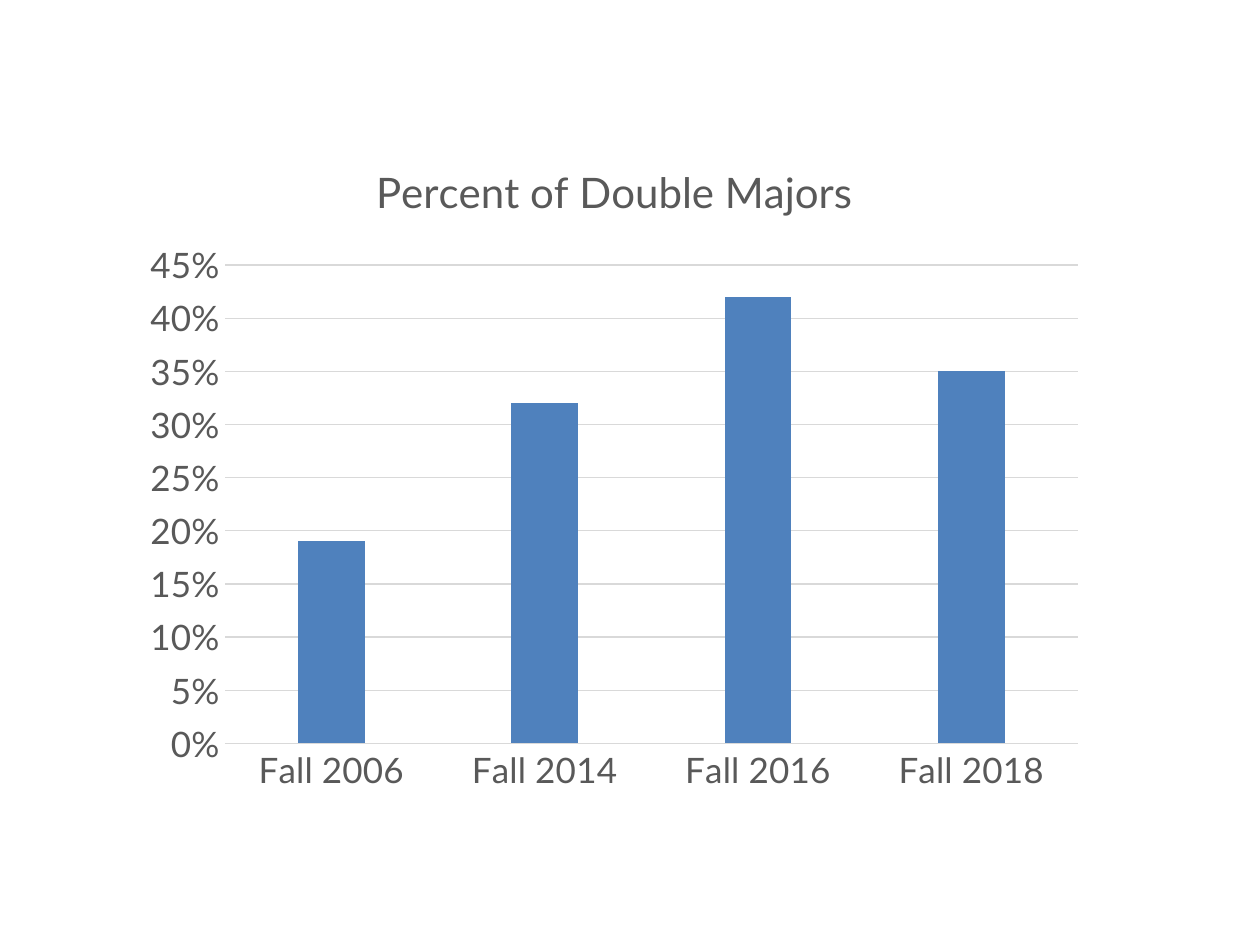
from dataclasses import dataclass

from pptx import Presentation
from pptx import util as u
from pptx.chart import data as chart_data
from pptx.dml import color
from pptx.enum import chart as chart_enum


@dataclass(frozen=True)
class Theme:
    font: str = "Lato"
    paper: str = "FFFFFF"
    ink: str = "595959"
    rule: str = "D9D9D9"
    bar: str = "4F81BD"
    title_size: int = 24
    label_size: int = 20
    rule_width: float = 0.75


THEME = Theme()
BLANK_LAYOUT = 6
TITLE = "Percent of Double Majors"
SHARES = {"Fall 2006": 0.19, "Fall 2014": 0.32, "Fall 2016": 0.42, "Fall 2018": 0.35}


def rgb(value):
    return color.RGBColor.from_string(value)


def style_font(font, size):
    font.name = THEME.font
    font.size = u.Pt(size)
    font.bold = False
    font.color.rgb = rgb(THEME.ink)


def style_rule(line):
    line.color.rgb = rgb(THEME.rule)
    line.width = u.Pt(THEME.rule_width)


def style_axes(chart):
    for axis in (chart.category_axis, chart.value_axis):
        axis.major_tick_mark = chart_enum.XL_TICK_MARK.NONE
        axis.minor_tick_mark = chart_enum.XL_TICK_MARK.NONE
        style_font(axis.tick_labels.font, THEME.label_size)
    style_rule(chart.category_axis.format.line)

    values = chart.value_axis
    values.minimum_scale = 0
    values.maximum_scale = 0.45
    values.major_unit = 0.05
    values.tick_labels.number_format = "0%"
    values.tick_labels.number_format_is_linked = False
    values.format.line.fill.background()
    values.has_major_gridlines = True
    style_rule(values.major_gridlines.format.line)


def add_majors_chart(page, left, top, width, height):
    shares = chart_data.CategoryChartData(number_format="0%")
    shares.categories = list(SHARES)
    shares.add_series("Series 1", list(SHARES.values()))
    chart = page.shapes.add_chart(
        chart_enum.XL_CHART_TYPE.COLUMN_CLUSTERED, left, top, width, height, shares
    ).chart
    style_font(chart.font, THEME.label_size)
    chart.has_legend = False
    chart.has_title = True
    para = chart.chart_title.text_frame.paragraphs[0]
    para.text = TITLE
    for span in para.runs:
        style_font(span.font, THEME.title_size)
    chart.chart_title.include_in_layout = False
    style_axes(chart)

    plot = chart.plots[0]
    plot.gap_width = 219
    plot.overlap = -27
    plot.vary_by_categories = False
    bars = plot.series[0].format
    bars.fill.solid()
    bars.fill.fore_color.rgb = rgb(THEME.bar)
    bars.line.fill.background()


def main():
    deck = Presentation()
    deck.slide_width, deck.slide_height = u.Cm(25.4), u.Cm(19.05)
    page = deck.slides.add_slide(deck.slide_layouts[BLANK_LAYOUT])
    page.background.fill.solid()
    page.background.fill.fore_color.rgb = rgb(THEME.paper)
    add_majors_chart(page, u.Cm(2.64), u.Cm(2.69), u.Cm(19.48), u.Cm(13.54))
    deck.save("out.pptx")


if __name__ == "__main__":
    main()
